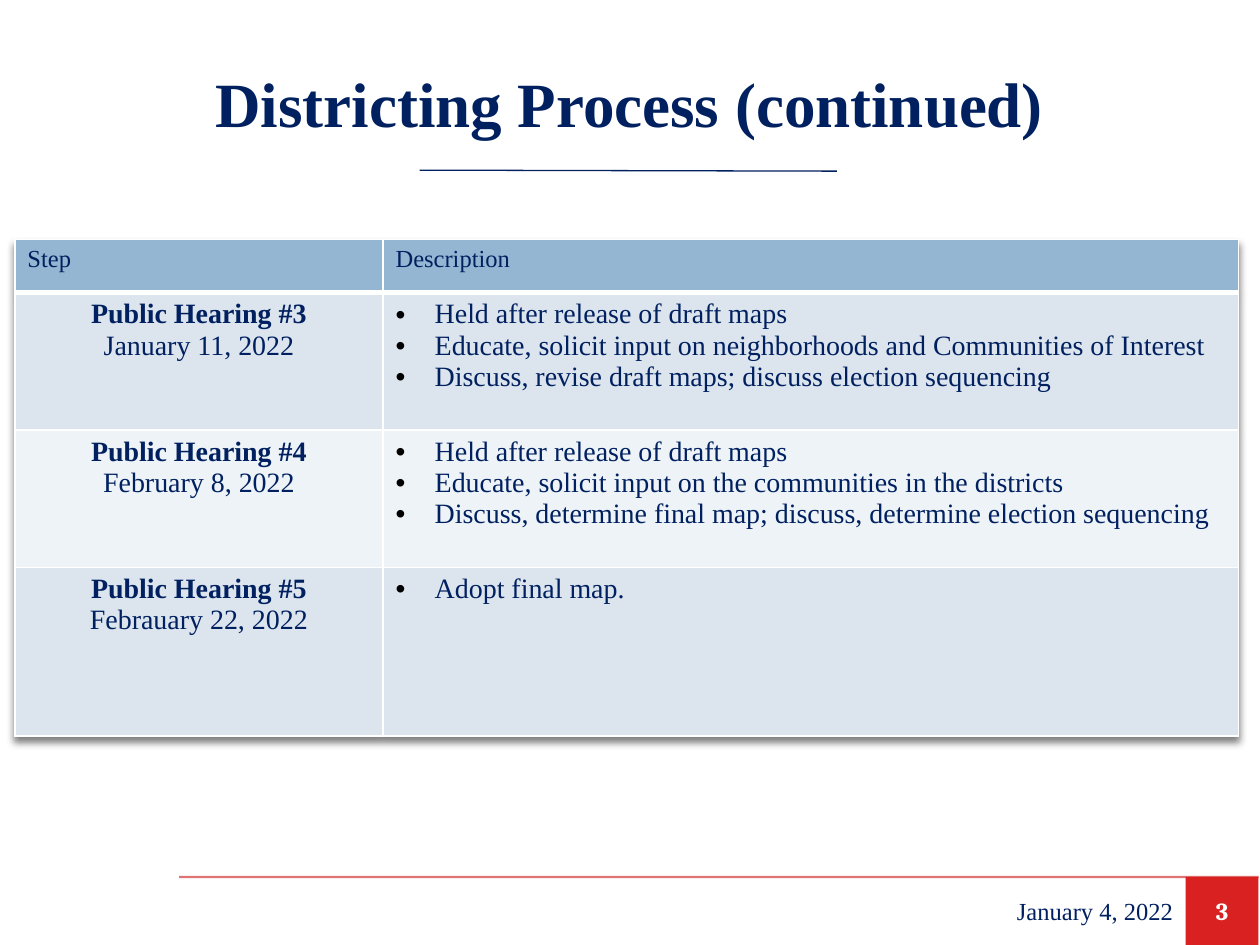
from lxml import etree
from pptx import Presentation
from pptx.dml.color import RGBColor
from pptx.enum import shapes, text
from pptx.oxml import parse_xml
from pptx.oxml.ns import nsdecls, qn
from pptx.util import Cm, Pt

COLORS = {"navy": "002060", "red": "D92121", "rule": "C80000", "white": "FFFFFF",
          "header": "94B6D2", "odd": "DCE5EE", "even": "EEF3F7", "black": "000000"}
SERIF = "Times New Roman"
HEARINGS = [
    ("Public Hearing #3", "January 11, 2022",
     ["Held after release of draft maps",
      "Educate, solicit input on neighborhoods and Communities of Interest",
      "Discuss, revise draft maps; discuss election sequencing"]),
    ("Public Hearing #4", "February 8, 2022",
     ["Held after release of draft maps",
      "Educate, solicit input on the communities in the districts",
      "Discuss, determine final map; discuss, determine election sequencing"]),
    ("Public Hearing #5", "Febrauary 22, 2022", ["Adopt final map."]),
]


def write(frame, lines, size, color="navy", align=text.PP_ALIGN.LEFT,
          bold_first=False, bullets=False, name=SERIF):
    for index, line in enumerate(lines):
        paragraph = frame.paragraphs[0] if index == 0 else frame.add_paragraph()
        paragraph.text = line
        paragraph.alignment = align
        if bullets:
            properties = paragraph._p.get_or_add_pPr()
            properties.set("marL", str(Cm(0.79)))
            properties.set("indent", str(-Cm(0.79)))
            for xml in (f'<a:buClr {nsdecls("a")}><a:srgbClr val="{COLORS["black"]}"/></a:buClr>',
                        f'<a:buFont {nsdecls("a")} typeface="Arial"/>',
                        f'<a:buChar {nsdecls("a")} char="•"/>'):
                properties.append(parse_xml(xml))
        font = paragraph.font
        font.name, font.size = name, Pt(size)
        font.bold = bold_first and index == 0
        font.color.rgb = RGBColor.from_string(COLORS[color])


def add_line(x1, y1, x2, y2, color, width):
    line = slide.shapes.add_connector(shapes.MSO_CONNECTOR.STRAIGHT, Cm(x1), Cm(y1), Cm(x2), Cm(y2))
    line.line.color.rgb = RGBColor.from_string(COLORS[color])
    line.line.width = Pt(width)
    etree.SubElement(line._element.spPr, qn("a:effectLst"))
    return line


presentation = Presentation()
presentation.slide_width, presentation.slide_height = Cm(25.4), Cm(19.05)
slide = presentation.slides.add_slide(presentation.slide_layouts[5])

# Footer rule, partly transparent
footer_top = 17.68
footer_rule = add_line(3.61, footer_top, 25.37, footer_top, "rule", 1.25)
rule_color = footer_rule._element.spPr.find(".//" + qn("a:srgbClr"))
etree.SubElement(rule_color, qn("a:alpha"), val="55000")

# Title and the line below it
title = slide.shapes.title
title.left, title.top, title.width, title.height = Cm(0.94), Cm(0.69), Cm(23.5), Cm(2.74)
title.text_frame.vertical_anchor = text.MSO_ANCHOR.MIDDLE
write(title.text_frame, ["Districting Process (continued)"], 36,
      align=text.PP_ALIGN.CENTER, bold_first=True)
add_line(8.46, 3.43, 16.87, 3.45, "navy", 0.75)

# Page number and date
number = slide.shapes.add_shape(shapes.MSO_SHAPE.RECTANGLE, Cm(23.9), Cm(footer_top), Cm(1.47), Cm(1.37))
number.shadow.inherit = False
number.fill.solid()
number.fill.fore_color.rgb = RGBColor.from_string(COLORS["red"])
number.line.fill.background()
number.text_frame.vertical_anchor = text.MSO_ANCHOR.MIDDLE
write(number.text_frame, ["3"], 14, "white", text.PP_ALIGN.CENTER, bold_first=True, name="Cambria")

date = slide.shapes.add_textbox(Cm(19.48), Cm(footer_top), Cm(4.42), Cm(1.37))
date.text_frame.word_wrap = True
date.text_frame.vertical_anchor = text.MSO_ANCHOR.MIDDLE
write(date.text_frame, ["January 4, 2022"], 14, align=text.PP_ALIGN.RIGHT)

# Hearing table
widths, heights = [7.42, 17.25], [1.07, 2.77, 2.77, 3.4]
table = slide.shapes.add_table(len(heights), len(widths), Cm(0.3), Cm(4.83),
                               Cm(sum(widths)), Cm(sum(heights))).table
for column, width in zip(table.columns, widths):
    column.width = Cm(width)
for row, height in zip(table.rows, heights):
    row.height = Cm(height)

for cell, heading in zip(table.rows[0].cells, ["Step", "Description"]):
    write(cell.text_frame, [heading], 14)
for row, (hearing, day, tasks) in zip(list(table.rows)[1:], HEARINGS):
    step, description = row.cells
    write(step.text_frame, [hearing, day], 16, align=text.PP_ALIGN.CENTER, bold_first=True)
    write(description.text_frame, tasks, 16, bullets=True)

# Cell fills and white borders, heavier under the header
for row_index, row in enumerate(table.rows):
    fill = "header" if row_index == 0 else "odd" if row_index % 2 else "even"
    for cell in row.cells:
        cell.fill.solid()
        cell.fill.fore_color.rgb = RGBColor.from_string(COLORS[fill])
        for position, side in enumerate(["lnL", "lnR", "lnT", "lnB"]):
            width = Pt(3 if row_index == 0 and side == "lnB" else 1)
            cell._tc.get_or_add_tcPr().insert(position, parse_xml(
                f'<a:{side} {nsdecls("a")} w="{width}"><a:solidFill>'
                f'<a:srgbClr val="{COLORS["white"]}"/></a:solidFill></a:{side}>'))

# Soft shadow below the table
table._tbl.tblPr.insert(0, parse_xml(
    f'<a:effectLst {nsdecls("a")}><a:outerShdw blurRad="50800" dist="38100" dir="5400000">'
    f'<a:srgbClr val="{COLORS["black"]}"><a:alpha val="50000"/></a:srgbClr>'
    '</a:outerShdw></a:effectLst>'))

presentation.save("out.pptx")
